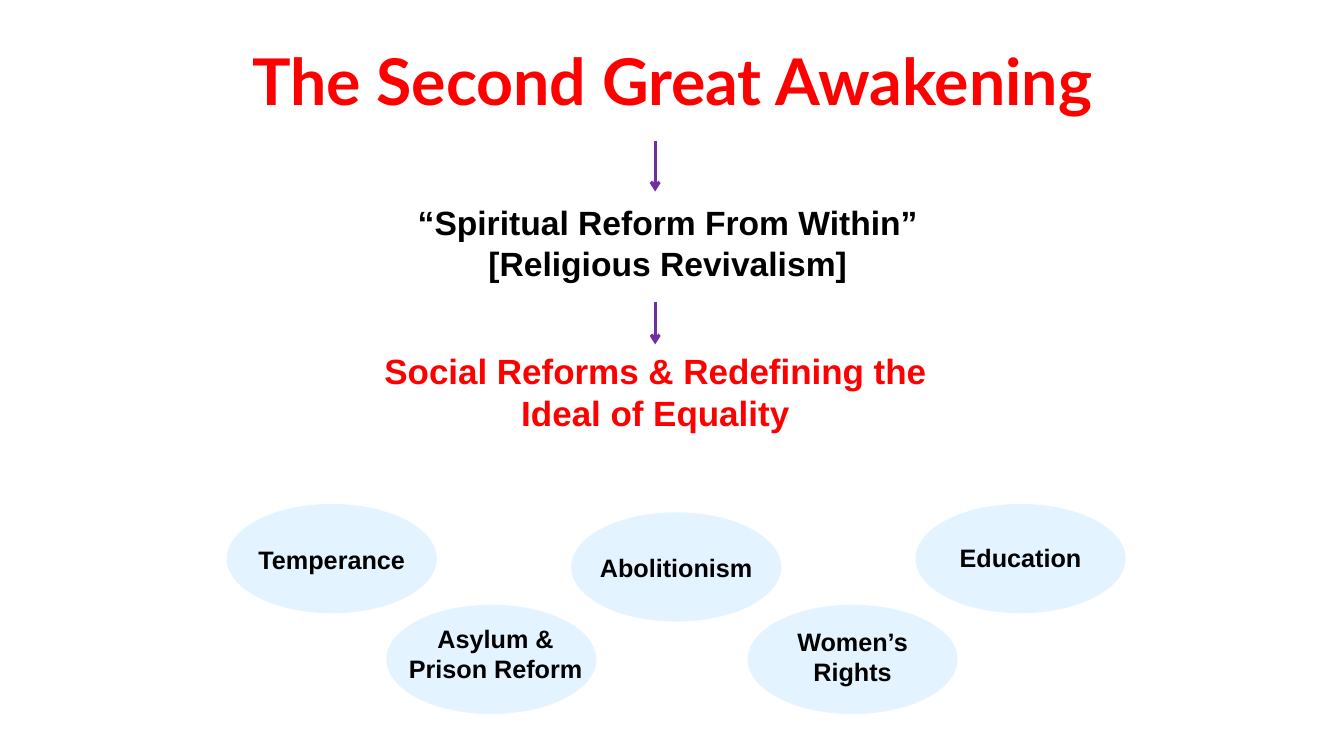
from lxml.etree import SubElement
from pptx import Presentation
from pptx.dml.color import RGBColor
from pptx.enum.shapes import MSO_CONNECTOR as Connector, MSO_SHAPE as Preset
from pptx.enum.text import MSO_ANCHOR as Anchor, PP_ALIGN as Align
from pptx.oxml.ns import qn
from pptx.util import Inches, Pt

RED = RGBColor(0xFF, 0x00, 0x00)
BLACK = RGBColor(0x00, 0x00, 0x00)
PURPLE = RGBColor(0x70, 0x30, 0xA0)
PALE_BLUE = RGBColor(0xC9, 0xE8, 0xFF)

COLUMNS, ROWS = 160, 90
OVAL_COLUMNS, OVAL_ROWS = 25, 13

REFORMS = [
    ("Temperance", 27, 60, (2, 4.2, 21, 4.8)),
    ("Asylum &\vPrison Reform", 46, 72, (1, 1.6, 24, 8.4)),
    ("Education", 109, 60, (2, 4, 21, 4.8)),
    ("Women’s Rights", 89, 72, (2, 2, 21, 8.4)),
    ("Abolitionism", 68, 61, (2, 4.2, 21, 4.8)),
]


class ReformSlide:
    def __init__(self, presentation):
        self.slide = presentation.slides.add_slide(presentation.slide_layouts[6])
        self.column = presentation.slide_width / COLUMNS
        self.row = presentation.slide_height / ROWS

    def place(self, column, row):
        return round(column * self.column), round(row * self.row)

    def text(self, words, column, row, columns, rows, size, color=BLACK,
             font="Arial", wrap=True, anchor=Anchor.TOP):
        box = self.slide.shapes.add_textbox(
            *self.place(column, row), *self.place(columns, rows))
        frame = box.text_frame
        frame.word_wrap = wrap
        frame.vertical_anchor = anchor
        frame.text = words
        paragraph = frame.paragraphs[0]
        paragraph.alignment = Align.CENTER
        for run in paragraph.runs:
            run.font.name = font
            run.font.size = Pt(size)
            run.font.bold = True
            run.font.color.rgb = color

    def down_arrow(self, column, top, bottom):
        arrow = self.slide.shapes.add_connector(
            Connector.STRAIGHT, *self.place(column, top), *self.place(column, bottom))
        arrow.line.color.rgb = PURPLE
        arrow.line.width = Pt(2.25)
        SubElement(arrow.line._get_or_add_ln(), qn("a:tailEnd"), type="arrow")
        SubElement(arrow._element.spPr, qn("a:effectLst"))

    def oval(self, column, row):
        shape = self.slide.shapes.add_shape(
            Preset.OVAL, *self.place(column, row), *self.place(OVAL_COLUMNS, OVAL_ROWS))
        shape.shadow.inherit = False
        shape.line.fill.background()
        shape.fill.solid()
        shape.fill.fore_color.rgb = PALE_BLUE
        color = shape._element.spPr.find(qn("a:solidFill"))[0]
        SubElement(color, qn("a:alpha"), val="50000")

    def reform(self, name, column, row, caption):
        left, top, columns, rows = caption
        self.oval(column, row)
        self.text(name, column + left, row + top, columns, rows, 18)


def main():
    presentation = Presentation()
    presentation.slide_width = Inches(13.33)
    presentation.slide_height = Inches(7.5)
    page = ReformSlide(presentation)
    page.text("The Second Great Awakening", 21, 1, 118, 17, 46, RED,
              font="Lato", wrap=False, anchor=Anchor.MIDDLE)
    page.down_arrow(78, 16.8, 22.8)
    page.text("“Spiritual Reform From Within”\v[Religious Revivalism]",
              43, 23.5, 73, 10.9, 24)
    page.down_arrow(78, 36, 41)
    page.text("Social Reforms & Redefining the Ideal of Equality",
              40, 41, 76, 11.3, 25, RED)
    for reform in REFORMS:
        page.reform(*reform)
    presentation.save("out.pptx")


if __name__ == "__main__":
    main()
